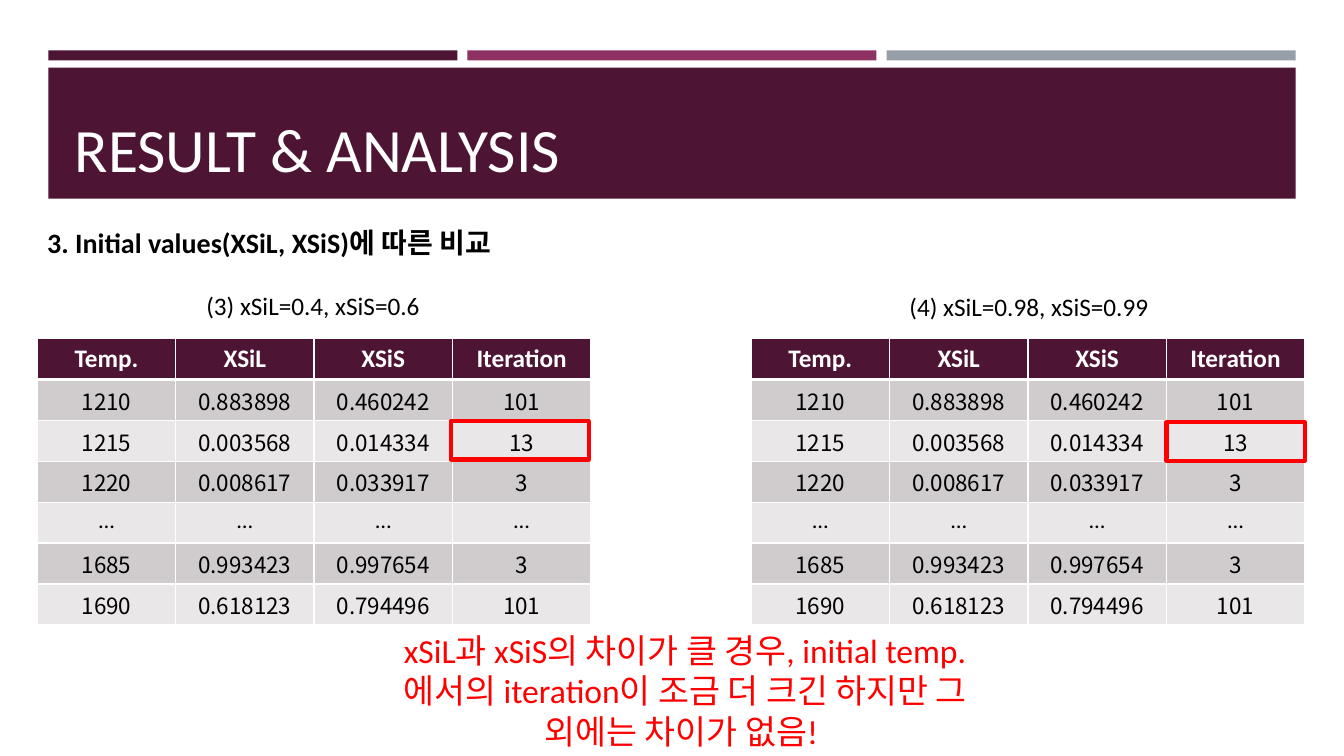
from lxml import etree
from pptx import Presentation
from pptx.dml.color import RGBColor
from pptx.enum import shapes, text
from pptx.oxml import ns
from pptx.util import Inches, Pt

COLORS = {
    "plum": "4D1434", "magenta": "903163", "slate": "969FA7",
    "band_dark": "D0CCCE", "band_light": "E9E7E8",
    "white": "FFFFFF", "black": "000000", "red": "FF0000",
}
LATIN, CJK = "Calibri", "Noto Sans CJK KR"
RESULTS = [
    ["Temp.", "XSiL", "XSiS", "Iteration"],
    ["1210", "0.883898", "0.460242", "101"],
    ["1215", "0.003568", "0.014334", "13"],
    ["1220", "0.008617", "0.033917", "3"],
    ["…"] * 4,
    ["1685", "0.993423", "0.997654", "3"],
    ["1690", "0.618123", "0.794496", "101"],
]


def rgb(name):
    """Return the named colour."""
    return RGBColor.from_string(COLORS[name])


def write(frame, wording, size, color, bold=False, align=text.PP_ALIGN.LEFT, face=LATIN):
    """Fill a text frame with one formatted paragraph."""
    frame.text = wording
    frame.word_wrap = True
    paragraph = frame.paragraphs[0]
    paragraph.alignment = align
    font = paragraph.font
    font.name, font.size, font.bold = face, Pt(size), bold
    font.color.rgb = rgb(color)


def add_text(slide, box, *args, **kwargs):
    """Place a text box in the given box of inches."""
    label = slide.shapes.add_textbox(*map(Inches, box))
    write(label.text_frame, *args, **kwargs)


def add_rectangle(slide, box, fill=None, line=None):
    """Place a filled or outlined rectangle."""
    rectangle = slide.shapes.add_shape(shapes.MSO_SHAPE.RECTANGLE, *map(Inches, box))
    rectangle.shadow.inherit = False
    if fill:
        rectangle.fill.solid()
        rectangle.fill.fore_color.rgb = rgb(fill)
    else:
        rectangle.fill.background()
    if line:
        rectangle.line.color.rgb = rgb(line)
        rectangle.line.width = Pt(3)
    else:
        rectangle.line.fill.background()


def add_header(slide, left, top, width):
    """Draw the three accent bars and the title band."""
    gap = 0.1
    bar_width = (width - 2 * gap) / 3
    for index, color in enumerate(("plum", "magenta", "slate")):
        add_rectangle(slide, (left + index * (bar_width + gap), top, bar_width, 0.1), color)
    add_rectangle(slide, (left, top + 0.17, width, 1.3), "plum")
    title = slide.shapes.title
    slide.shapes.element.append(title.element)
    title.left, title.top = Inches(left + 0.16), Inches(top + 0.27)
    title.width, title.height = Inches(12.06), Inches(1.11)
    write(title.text_frame, "RESULT & ANALYSIS", 44, "white")
    title.text_frame.vertical_anchor = text.MSO_ANCHOR.BOTTOM


def set_borders(cell, row):
    """Give a cell white borders, thick beneath the header row."""
    properties = cell._tc.get_or_add_tcPr()
    widths = {"L": 1, "R": 1, "T": 3 if row == 1 else 1, "B": 3 if row == 0 else 1}
    for index, (side, width) in enumerate(widths.items()):
        border = etree.Element(ns.qn(f"a:ln{side}"), w=str(Pt(width)))
        solid = etree.SubElement(border, ns.qn("a:solidFill"))
        etree.SubElement(solid, ns.qn("a:srgbClr"), val=COLORS["white"])
        properties.insert(index, border)


def format_cell(cell, row, wording):
    """Write and style one table cell."""
    header, ellipsis = row == 0, wording == "…"
    write(cell.text_frame, wording, 18 if header else 16, "white" if header else "black",
          header, text.PP_ALIGN.CENTER, LATIN if header or ellipsis else CJK)
    if not (header or ellipsis):
        cell.vertical_anchor = text.MSO_ANCHOR.MIDDLE
        cell.margin_left = cell.margin_right = cell.margin_top = Inches(0.01)
        cell.margin_bottom = 0
    cell.fill.solid()
    cell.fill.fore_color.rgb = rgb(
        "plum" if header else "band_dark" if row % 2 else "band_light")
    set_borders(cell, row)


def add_results(slide, left, top, width, height):
    """Place a table of results."""
    box = map(Inches, (left, top, width, height))
    table = slide.shapes.add_table(len(RESULTS), len(RESULTS[0]), *box).table
    table.horz_banding = False
    for row, values in enumerate(RESULTS):
        for column, wording in enumerate(values):
            format_cell(table.cell(row, column), row, wording)


def main():
    """Build and save the slide."""
    deck = Presentation()
    deck.slide_width, deck.slide_height = Inches(13.33), Inches(7.5)
    slide = deck.slides.add_slide(deck.slide_layouts[5])
    center = text.PP_ALIGN.CENTER
    add_header(slide, 0.48, 0.5, 12.37)
    for left in (0.37, 7.45):
        add_results(slide, left, 3.36, 5.49, 2.84)
    add_text(slide, (0.37, 2.83, 5.47, 0.4), "(3) xSiL=0.4, xSiS=0.6", 18, "black", align=center)
    add_text(slide, (7.47, 2.84, 5.47, 0.4), "(4) xSiL=0.98, xSiS=0.99", 18, "black", align=center)
    for left, top in ((4.47, 4.18), (11.57, 4.19)):
        add_rectangle(slide, (left, top, 1.37, 0.38), line="red")
    add_text(slide, (3.81, 6.2, 5.97, 1.31),
             "xSiL과 xSiS의 차이가 클 경우, initial temp. 에서의 iteration이 조금 더 크긴 "
             "하지만 그 외에는 차이가 없음! ", 24, "red", align=center)
    add_text(slide, (0.37, 2.19, 11.24, 0.44),
             "3. Initial values(XSiL, XSiS)에 따른 비교", 20, "black", bold=True)
    deck.save("out.pptx")


if __name__ == "__main__":
    main()
